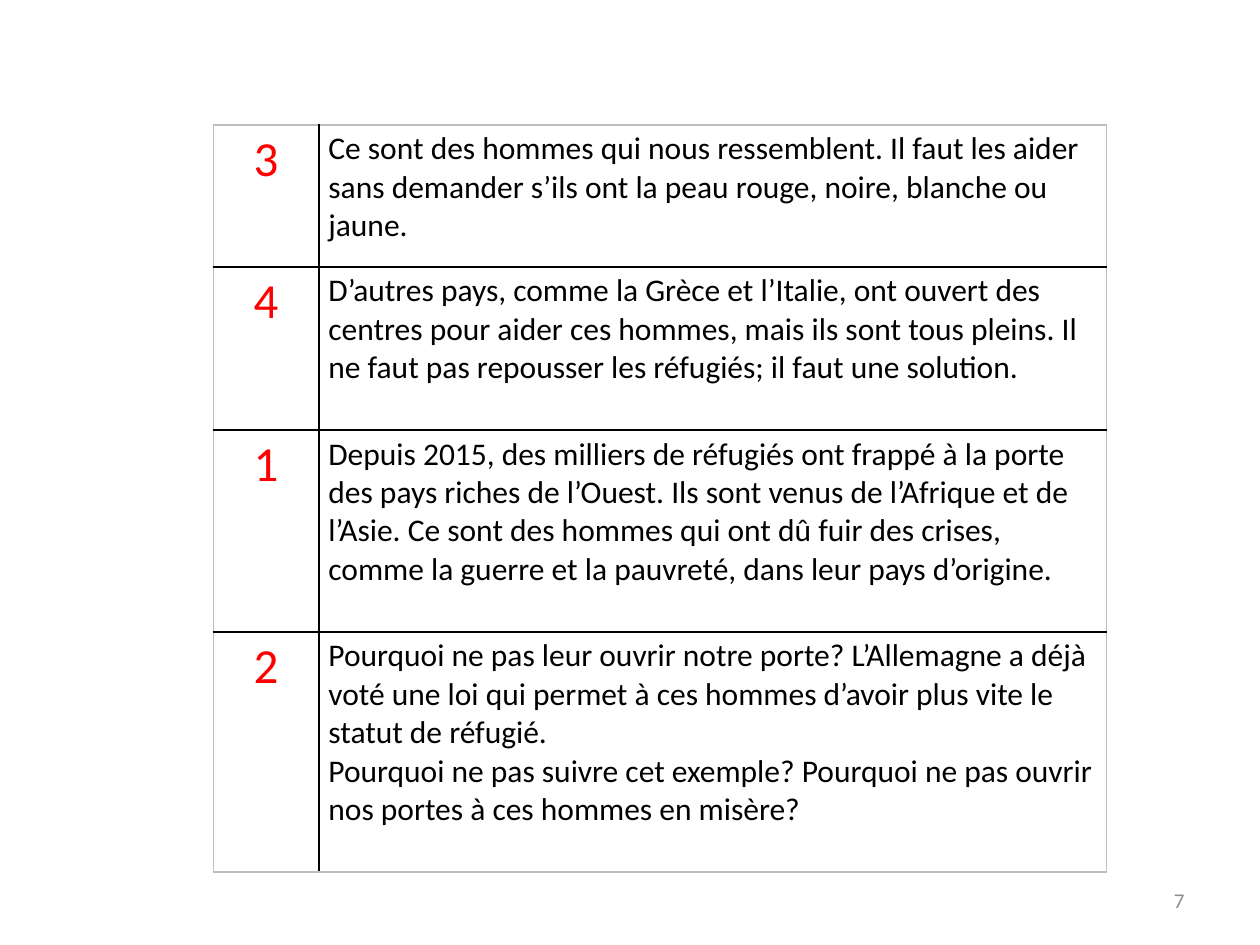
import lxml.etree
import pptx
import pptx.dml.color
import pptx.enum.text
import pptx.oxml.ns
import pptx.util

Cm = pptx.util.Cm
Pt = pptx.util.Pt
Align = pptx.enum.text.PP_ALIGN
Anchor = pptx.enum.text.MSO_ANCHOR

PASSAGES = [
    ("3", 2.86, [
        "Ce sont des hommes qui nous ressemblent. Il faut les aider sans demander "
        "s’ils ont la peau rouge, noire, blanche ou jaune.",
    ]),
    ("4", 3.29, [
        "D’autres pays, comme la Grèce et l’Italie, ont ouvert des centres pour aider "
        "ces hommes, mais ils sont tous pleins. Il ne faut pas repousser les réfugiés; "
        "il faut une solution.",
    ]),
    ("1", 4.07, [
        "Depuis 2015, des milliers de réfugiés ont frappé à la porte des pays riches "
        "de l’Ouest. Ils sont venus de l’Afrique et de l’Asie. Ce sont des hommes qui "
        "ont dû fuir des crises, comme la guerre et la pauvreté, dans leur pays d’origine.",
    ]),
    ("2", 4.84, [
        "Pourquoi ne pas leur ouvrir notre porte? L’Allemagne a déjà voté une loi qui "
        "permet à ces hommes d’avoir plus vite le statut de réfugié.",
        "Pourquoi ne pas suivre cet exemple? Pourquoi ne pas ouvrir nos portes à ces "
        "hommes en misère?",
    ]),
]
PAGE_NUMBER = "7"
COLUMN_WIDTHS = (2.13, 15.88)

THEME = {
    "font": "Calibri",
    "order": (28, "FF0000"),
    "passage": (18, "000000"),
    "page": (12, "8C8C8C"),
    "inner_line": "000000",
    "outer_line": "BFBFBF",
    "line_width": 1,
}


def write(frame, paragraphs, style, alignment):
    size, colour = THEME[style]
    for index, wording in enumerate(paragraphs):
        paragraph = frame.paragraphs[0] if index == 0 else frame.add_paragraph()
        paragraph.alignment = alignment
        run = paragraph.add_run()
        run.text = wording
        run.font.name = THEME["font"]
        run.font.size = Pt(size)
        run.font.color.rgb = pptx.dml.color.RGBColor.from_string(colour)


def draw_borders(cell, outer_sides):
    qn = pptx.oxml.ns.qn
    properties = cell._tc.get_or_add_tcPr()
    for side in "LRTB":
        line = lxml.etree.SubElement(
            properties, qn(f"a:ln{side}"), w=str(Pt(THEME["line_width"])))
        fill = lxml.etree.SubElement(line, qn("a:solidFill"))
        colour = THEME["outer_line" if side in outer_sides else "inner_line"]
        lxml.etree.SubElement(fill, qn("a:srgbClr"), val=colour)


def add_passages(slide):
    heights = [height for _, height, _ in PASSAGES]
    grid = slide.shapes.add_table(
        len(PASSAGES), len(COLUMN_WIDTHS), Cm(4.3), Cm(2.52),
        Cm(sum(COLUMN_WIDTHS)), Cm(sum(heights))).table
    grid.first_row = grid.horz_banding = False
    for column, width in zip(grid.columns, COLUMN_WIDTHS):
        column.width = Cm(width)
    last = len(PASSAGES) - 1
    for index, (order, height, paragraphs) in enumerate(PASSAGES):
        grid.rows[index].height = Cm(height)
        ends = ("T" if index == 0 else "") + ("B" if index == last else "")
        order_cell, passage_cell = grid.rows[index].cells
        for cell, edge in ((order_cell, "L"), (passage_cell, "R")):
            cell.margin_left = cell.margin_right = Cm(0.19)
            cell.margin_top = cell.margin_bottom = Cm(0.1)
            draw_borders(cell, edge + ends)
            cell.fill.background()
        write(order_cell.text_frame, [order], "order", Align.CENTER)
        write(passage_cell.text_frame, paragraphs, "passage", Align.LEFT)


def add_page_number(slide):
    frame = slide.shapes.add_textbox(
        Cm(18.2), Cm(17.65), Cm(5.93), Cm(1.01)).text_frame
    frame.word_wrap = True
    frame.vertical_anchor = Anchor.MIDDLE
    write(frame, [PAGE_NUMBER], "page", Align.RIGHT)


def main():
    deck = pptx.Presentation()
    deck.slide_width, deck.slide_height = Cm(25.4), Cm(19.05)
    slide = deck.slides.add_slide(deck.slide_layouts[6])
    add_passages(slide)
    add_page_number(slide)
    deck.save("out.pptx")


if __name__ == "__main__":
    main()
